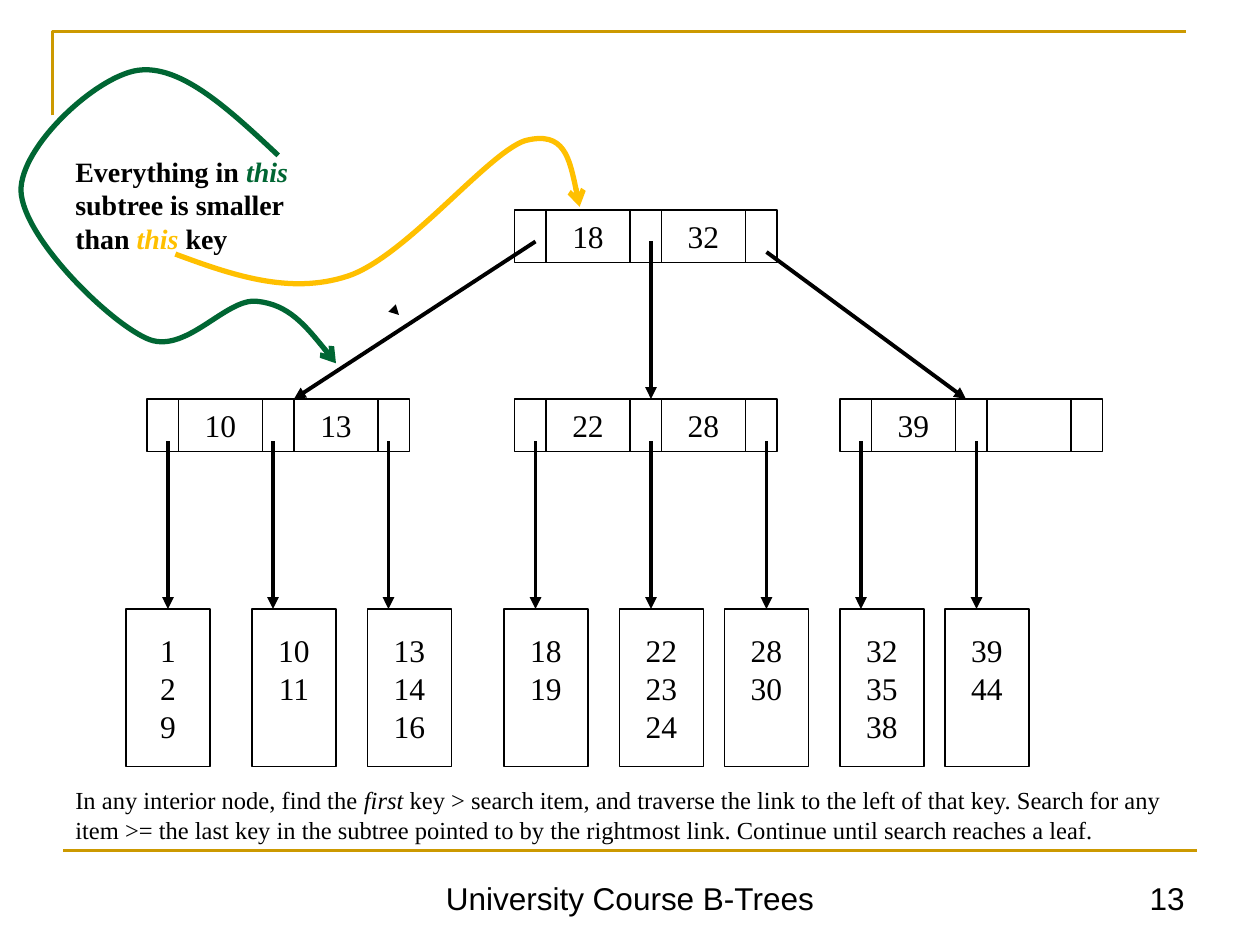
from lxml import etree
from pptx import Presentation
from pptx.dml.color import RGBColor
from pptx.enum import shapes, text
from pptx.oxml.ns import qn
from pptx.util import Pt

PX = 7620  # EMU per px, 120 px to the inch
COLORS = {"black": "000000", "rule": "CC9900", "green": "006633", "yellow": "FFC000"}
SERIF, SANS = "Times New Roman", "Arial"

prs = Presentation()
prs.slide_width, prs.slide_height = 1200 * PX, 900 * PX
s = prs.slides.add_slide(prs.slide_layouts[6])


def style_line(sp, color, width, arrow=None):
    """Give a shape or connector its line, an optional end arrow and no shadow."""
    sp.line.color.rgb = RGBColor.from_string(COLORS[color])
    sp.line.width = Pt(width)
    if arrow:
        etree.SubElement(sp.line._get_or_add_ln(), qn("a:tailEnd"), type=arrow)
    etree.SubElement(sp._element.spPr, qn("a:effectLst"))


def add_runs(p, runs, font, size, bold=False):
    """Add (text, colour, italic) runs to a paragraph."""
    for words, color, italic in runs:
        r = p.add_run()
        r.text = words
        r.font.name, r.font.size = font, Pt(size)
        r.font.bold, r.font.italic = bold, italic
        r.font.color.rgb = RGBColor.from_string(COLORS[color])


# Frame rules
builder = s.shapes.build_freeform(50, 110, scale=PX)
builder.add_line_segments([(50, 30), (1130, 30)], close=False)
corner = builder.convert_to_shape()
corner.fill.background()
style_line(corner, "rule", 1.5)
footer_rule = s.shapes.add_connector(
    shapes.MSO_CONNECTOR.STRAIGHT, 60 * PX, 810 * PX, 1140 * PX, 810 * PX)
style_line(footer_rule, "rule", 1.5)

# Boxes: left, top, width, height, lines of text
NODE_H, LEAF_TOP, LEAF_W, LEAF_H = 50, 580, 80, 150
nodes = [
    (490, 200, ["18", "32"]),
    (140, 380, ["10", "13"]),
    (490, 380, ["22", "28"]),
    (800, 380, ["39", ""]),
]
leaves = [  # left, x of the incoming arrow, values
    (120, 160, ["1", "2", "9"]),
    (240, 260, ["10", "11"]),
    (350, 370, ["13", "14", "16"]),
    (480, 510, ["18", "19"]),
    (590, 620, ["22", "23", "24"]),
    (690, 730, ["28", "30"]),
    (800, 820, ["32", "35", "38"]),
    (900, 930, ["39", "44"]),
]
boxes = [(left, LEAF_TOP, LEAF_W, LEAF_H, values) for left, _, values in leaves]
for left, top, keys in nodes:
    x = left
    for width, key in zip((30, 80, 30, 80, 30), ("", keys[0], "", keys[1], "")):
        boxes.append((x, top, width, NODE_H, [key] if key else []))
        x += width

leaf_boxes = []
for left, top, width, height, lines in boxes:
    sp = s.shapes.add_shape(shapes.MSO_SHAPE.RECTANGLE,
                            left * PX, top * PX, width * PX, height * PX)
    sp.fill.background()
    style_line(sp, "black", 0.75)
    tf = sp.text_frame
    tf.word_wrap = False
    tf.vertical_anchor = text.MSO_ANCHOR.MIDDLE
    if height == LEAF_H:
        leaf_boxes.append(sp)
        tf.vertical_anchor = text.MSO_ANCHOR.TOP
        tf.margin_top = 21 * PX
    for i, value in enumerate(lines):
        p = tf.add_paragraph() if i else tf.paragraphs[0]
        p.alignment = text.PP_ALIGN.CENTER
        add_runs(p, [(value, "black", False)], SERIF, 18)

# Links to the leaves and from the root
links = [(x, 420, x, LEAF_TOP, box) for (_, x, _), box in zip(leaves, leaf_boxes)]
links += [(510, 230, 280, 380, None), (620, 230, 620, 380, None),
          (730, 240, 920, 380, None)]
for x1, y1, x2, y2, box in links:
    link = s.shapes.add_connector(shapes.MSO_CONNECTOR.STRAIGHT,
                                  x1 * PX, y1 * PX, x2 * PX, y2 * PX)
    if box is not None and box.left + box.width // 2 == x2 * PX:
        link.end_connect(box, 0)
    style_line(link, "black", 2.25, "triangle")

# Lone arrowhead beside the left link
builder = s.shapes.build_freeform(370, 297, scale=PX)
builder.add_line_segments([(377, 290), (380, 300)], close=True)
arrowhead = builder.convert_to_shape()
arrowhead.shadow.inherit = False
arrowhead.fill.solid()
arrowhead.fill.fore_color.rgb = RGBColor.from_string(COLORS["black"])
arrowhead.line.fill.background()

# Curved arrows: a start, then two control points and an end for each curve
curves = [
    ("yellow", [(167, 242), (221, 262), (276, 281), (331, 263),
                (386, 245), (464, 146), (500, 134), (538, 124), (545, 161), (552, 197)]),
    ("green", [(265, 148), (218, 104), (172, 61), (131, 67),
               (91, 73), (19, 140), (20, 182), (22, 226), (102, 305), (139, 322),
               (176, 340), (215, 283), (245, 287), (275, 290), (298, 318), (320, 346)]),
]
for color, points in curves:
    builder = s.shapes.build_freeform(*points[0], scale=PX)
    builder.add_line_segments(points[1:], close=False)
    curve = builder.convert_to_shape()
    segments = list(curve._element.iter(qn("a:lnTo")))
    for i in range(0, len(segments), 3):
        bezier = etree.Element(qn("a:cubicBezTo"))
        segments[i].addprevious(bezier)
        for segment in segments[i:i + 3]:
            bezier.append(segment[0])
            segment.getparent().remove(segment)
    curve.fill.background()
    style_line(curve, color, 3, "arrow")

# Notes, footer and page number
LEFT, CENTER, RIGHT = text.PP_ALIGN.LEFT, text.PP_ALIGN.CENTER, text.PP_ALIGN.RIGHT
TOP, BOTTOM = text.MSO_ANCHOR.TOP, text.MSO_ANCHOR.BOTTOM
subtree_note = [("Everything in ", "black", False), ("this ", "green", True),
                ("subtree is smaller than ", "black", False),
                ("this ", "yellow", True), ("key", "black", False)]
search_note = [("In any interior node, find the ", "black", False),
               ("first ", "black", True),
               ("key > search item, and traverse the link to the left of that key. "
                "Search for any item >= the last key in the subtree pointed to by the "
                "rightmost link. Continue until search reaches a leaf.", "black", False)]
footer = [("University Course B-Trees", "black", False)]
page_number = [("13", "black", False)]
for (x, y, w, h), runs, font, size, bold, align, anchor, before in [
    ((60, 141, 240, 109), subtree_note, SERIF, 16, True, LEFT, TOP, 7.5),
    ((60, 742, 1080, 68), search_note, SERIF, 14, False, LEFT, TOP, 8.8),
    ((210, 820, 780, 59), footer, SANS, 18, False, CENTER, BOTTOM, 0),
    ((860, 820, 280, 59), page_number, SANS, 18, False, RIGHT, BOTTOM, 0),
]:
    tf = s.shapes.add_textbox(x * PX, y * PX, w * PX, h * PX).text_frame
    tf.word_wrap = True
    tf.vertical_anchor = anchor
    p = tf.paragraphs[0]
    p.alignment = align
    p.space_before = Pt(before)
    add_runs(p, runs, font, size, bold)

prs.save("out.pptx")
